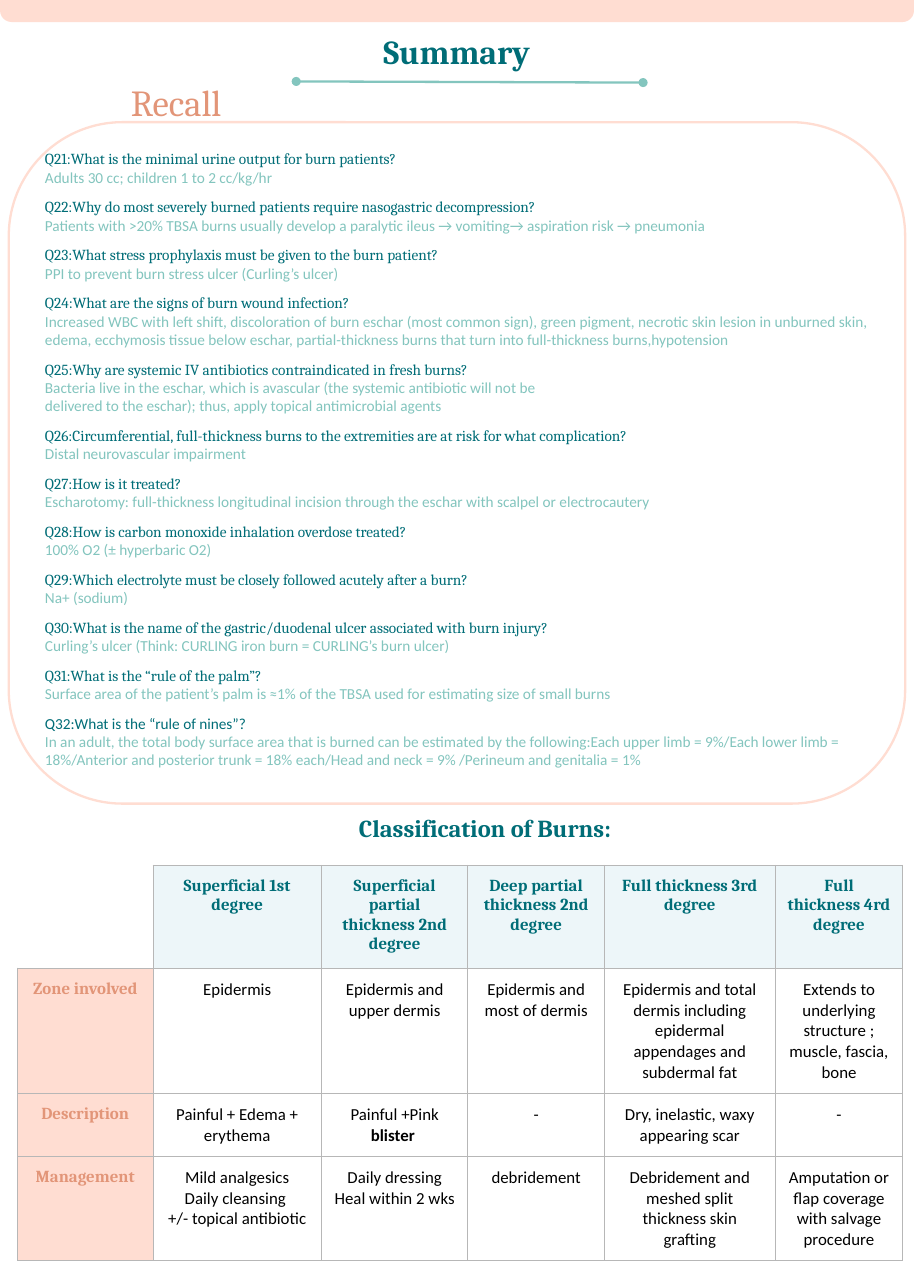
from dataclasses import dataclass

from lxml import etree
from pptx import Presentation
from pptx import util as u
from pptx.dml.color import RGBColor
from pptx.enum import shapes, text
from pptx.oxml import ns

# Page grid: square units of a tenth of an inch
COLUMNS, ROWS = 83, 117
UNIT = u.Inches(0.1)
INSET = UNIT

TEAL = RGBColor(0x00, 0x6D, 0x77)
MINT = RGBColor(0x83, 0xC5, 0xBE)
PEACH = RGBColor(0xFF, 0xDD, 0xD2)
CORAL = RGBColor(0xE2, 0x95, 0x78)
ICE = RGBColor(0xED, 0xF6, 0xF9)
GREY = RGBColor(0xB7, 0xB7, 0xB7)
WHITE = RGBColor(0xFF, 0xFF, 0xFF)
BLACK = RGBColor(0x00, 0x00, 0x00)

SERIF, SANS = "Cambria", "Calibri"
CENTER, LEFT = text.PP_ALIGN.CENTER, text.PP_ALIGN.LEFT


@dataclass(frozen=True)
class Area:
    column: float
    row: float
    columns: float
    rows: float

    def lengths(self) -> list[int]:
        return [round(n * UNIT) for n in (self.column, self.row, self.columns, self.rows)]


@dataclass(frozen=True)
class Style:
    font: str
    size: float
    color: RGBColor
    bold: bool = False


@dataclass(frozen=True)
class Heading:
    words: str
    area: Area
    style: Style
    align: text.PP_ALIGN = CENTER
    anchor: text.MSO_ANCHOR = text.MSO_ANCHOR.TOP
    indent: float = 0


@dataclass(frozen=True)
class Recall:
    question: str
    answer: str
    font: str = SERIF


HEADINGS = [
    Heading("Summary ", Area(11.6, 1.8, 60.4, 6.7), Style(SERIF, 22, TEAL, True)),
    Heading("Recall", Area(6.8, 7.6, 18.4, 3.3), Style(SERIF, 24, CORAL),
            anchor=text.MSO_ANCHOR.MIDDLE),
    Heading("Classification of Burns:", Area(26.6, 72.9, 58.1 - 1.7, 4.3),
            Style(SERIF, 16, TEAL, True), LEFT, indent=5),
]

FIRST_QUESTION = 21
RECALLS = [
    Recall("What is the minimal urine output for burn patients?",
           "Adults 30 cc; children 1 to 2 cc/kg/hr"),
    Recall("Why do most severely burned patients require nasogastric decompression?",
           "Patients with >20% TBSA burns usually develop a paralytic ileus → vomiting→ "
           "aspiration risk → pneumonia"),
    Recall("What stress prophylaxis must be given to the burn patient?",
           "PPI to prevent burn stress ulcer (Curling’s ulcer)"),
    Recall("What are the signs of burn wound infection?",
           "Increased WBC with left shift, discoloration of burn eschar (most common sign), "
           "green pigment, necrotic skin lesion in unburned skin, edema, ecchymosis tissue below "
           "eschar, partial-thickness burns that turn into full-thickness burns,hypotension"),
    Recall("Why are systemic IV antibiotics contraindicated in fresh burns?",
           "Bacteria live in the eschar, which is avascular (the systemic antibiotic will not be\n"
           "delivered to the eschar); thus, apply topical antimicrobial agents"),
    Recall("Circumferential, full-thickness burns to the extremities are at risk for what "
           "complication?", "Distal neurovascular impairment"),
    Recall("How is it treated?",
           "Escharotomy: full-thickness longitudinal incision through the eschar with scalpel "
           "or electrocautery"),
    Recall("How is carbon monoxide inhalation overdose treated?", "100% O2 (± hyperbaric O2)"),
    Recall("Which electrolyte must be closely followed acutely after a burn?", "Na+ (sodium)"),
    Recall("What is the name of the gastric/duodenal ulcer associated with burn injury?",
           "Curling’s ulcer (Think: CURLING iron burn = CURLING’s burn ulcer)"),
    Recall("What is the “rule of the palm”?",
           "Surface area of the patient’s palm is ≈1% of the TBSA used for estimating size of "
           "small burns"),
    Recall("What is the “rule of nines”?",
           "In an adult, the total body surface area that is burned can be estimated by the "
           "following:Each upper limb = 9%/Each lower limb = 18%/Anterior and posterior trunk = "
           "18% each/Head and neck = 9% /Perineum and genitalia = 1%", SANS),
]

# Words after an asterisk are bold
BURNS = [
    ["", "Superficial 1st degree", "Superficial partial thickness 2nd degree",
     "Deep partial thickness 2nd degree", "Full thickness 3rd degree",
     "Full thickness 4rd degree"],
    ["Zone involved", "Epidermis", "Epidermis and upper dermis", "Epidermis and most of dermis",
     "Epidermis and total dermis including epidermal appendages and subdermal fat",
     "Extends to underlying structure ; muscle, fascia, bone"],
    ["Description", "Painful + Edema + erythema", "Painful +Pink *blister ", "-",
     "Dry, inelastic, waxy appearing scar", "-"],
    ["Management", "Mild analgesics\nDaily cleansing \n+/- topical antibiotic",
     "Daily dressing\nHeal within 2 wks", "debridement",
     "Debridement and meshed split thickness skin grafting",
     "Amputation or flap coverage with salvage procedure"],
]
BURN_COLUMNS = [12.3, 15.3, 13.3, 12.4, 15.5, 11.6]
BURN_ROWS = [9.1, 11.4, 5.7, 9.5]


def format_span(span, style: Style) -> None:
    span.font.name, span.font.size = style.font, u.Pt(style.size)
    span.font.bold, span.font.color.rgb = style.bold, style.color


def add_text(page, area: Area, words: str):
    frame = page.shapes.add_textbox(*area.lengths()).text_frame
    frame.word_wrap = True
    frame.margin_left = frame.margin_right = frame.margin_top = frame.margin_bottom = INSET
    frame.text = words
    return frame


def add_heading(page, heading: Heading) -> None:
    frame = add_text(page, heading.area, heading.words)
    frame.vertical_anchor = heading.anchor
    frame.margin_left = round(INSET + heading.indent * UNIT)
    para = frame.paragraphs[0]
    para.alignment = heading.align
    format_span(para.runs[0], heading.style)


def add_frames(page) -> None:
    band = page.shapes.add_shape(shapes.MSO_SHAPE.ROUND_2_SAME_RECTANGLE,
                                 *Area(0, -0.1, COLUMNS, 2.1).lengths())
    band.rotation = 180
    band.adjustments[0], band.adjustments[1] = 0.5, 0
    band.fill.solid()
    band.fill.fore_color.rgb = PEACH
    band.line.fill.background()
    panel = page.shapes.add_shape(shapes.MSO_SHAPE.ROUNDED_RECTANGLE,
                                  *Area(0.8, 11.1, 81.4, 61.9).lengths())
    panel.adjustments[0] = 0.167
    panel.fill.background()
    panel.line.color.rgb, panel.line.width = PEACH, u.Pt(1.5)
    for shape in (band, panel):
        shape.shadow.inherit = False


def add_rule(page) -> None:
    ends = [round(n * UNIT) for n in (26.9, 7.4, 58.4, 7.5)]
    rule = page.shapes.add_connector(shapes.MSO_CONNECTOR.STRAIGHT, *ends)
    rule.line.color.rgb, rule.line.width = MINT, u.Pt(1.5)
    for end in ("a:headEnd", "a:tailEnd"):
        etree.SubElement(rule.line._get_or_add_ln(), ns.qn(end), type="oval")
    etree.SubElement(rule._element.spPr, ns.qn("a:effectLst"))


def add_recalls(page, area: Area) -> None:
    lines, styles = [], []
    for number, recall in enumerate(RECALLS, FIRST_QUESTION):
        answers = recall.answer.split("\n")
        lines += [f"Q{number}:{recall.question}", *answers]
        styles += [Style(recall.font, 10, TEAL)] + [Style(SANS, 10, MINT)] * len(answers)
    frame = add_text(page, area, "\n".join(lines))
    for index, (para, style) in enumerate(zip(frame.paragraphs, styles)):
        format_span(para.runs[0], style)
        if index and style.color == TEAL:
            para.space_before = u.Pt(7.3)


def add_borders(cell, sides: str) -> None:
    for side in sides:
        line = etree.SubElement(cell._tc.get_or_add_tcPr(), ns.qn(f"a:ln{side}"),
                                w=str(u.Pt(0.75)))
        fill = etree.SubElement(line, ns.qn("a:solidFill"))
        etree.SubElement(fill, ns.qn("a:srgbClr"), val=str(GREY))


def fill_cell(cell, words: str, style: Style, fill: RGBColor) -> None:
    add_borders(cell, "LRTB" if words else "RB")
    cell.fill.solid()
    cell.fill.fore_color.rgb = fill
    cell.margin_left = cell.margin_right = cell.margin_top = cell.margin_bottom = INSET
    plain, _, strong = words.partition("*")
    cell.text_frame.text = plain
    for para in cell.text_frame.paragraphs:
        para.alignment = CENTER
        for span in para.runs:
            format_span(span, style)
    if strong:
        span = cell.text_frame.paragraphs[-1].add_run()
        span.text = strong
        format_span(span, Style(style.font, style.size, style.color, True))


def add_burn_table(page) -> None:
    area = Area(1.6, 78.6, sum(BURN_COLUMNS), sum(BURN_ROWS))
    table = page.shapes.add_table(len(BURNS), len(BURN_COLUMNS), *area.lengths()).table
    table.first_row = table.horz_banding = False
    for column, width in zip(table.columns, BURN_COLUMNS):
        column.width = round(width * UNIT)
    for r, (row, height) in enumerate(zip(BURNS, BURN_ROWS)):
        table.rows[r].height = round(height * UNIT)
        for c, words in enumerate(row):
            style, fill = Style(SANS, 11, BLACK), WHITE
            if r == 0 and c:
                style, fill = Style(SERIF, 11, TEAL, True), ICE
            elif r and c == 0:
                style, fill = Style(SERIF, 11, CORAL, True), PEACH
            fill_cell(table.cell(r, c), words, style, fill)


def main() -> None:
    deck = Presentation()
    deck.slide_width, deck.slide_height = COLUMNS * UNIT, ROWS * UNIT
    page = deck.slides.add_slide(deck.slide_layouts[6])
    add_frames(page)
    add_rule(page)
    for heading in HEADINGS:
        add_heading(page, heading)
    add_recalls(page, Area(3.1, 12.6, 79.9, 59.2))
    add_burn_table(page)
    deck.save("out.pptx")


if __name__ == "__main__":
    main()
